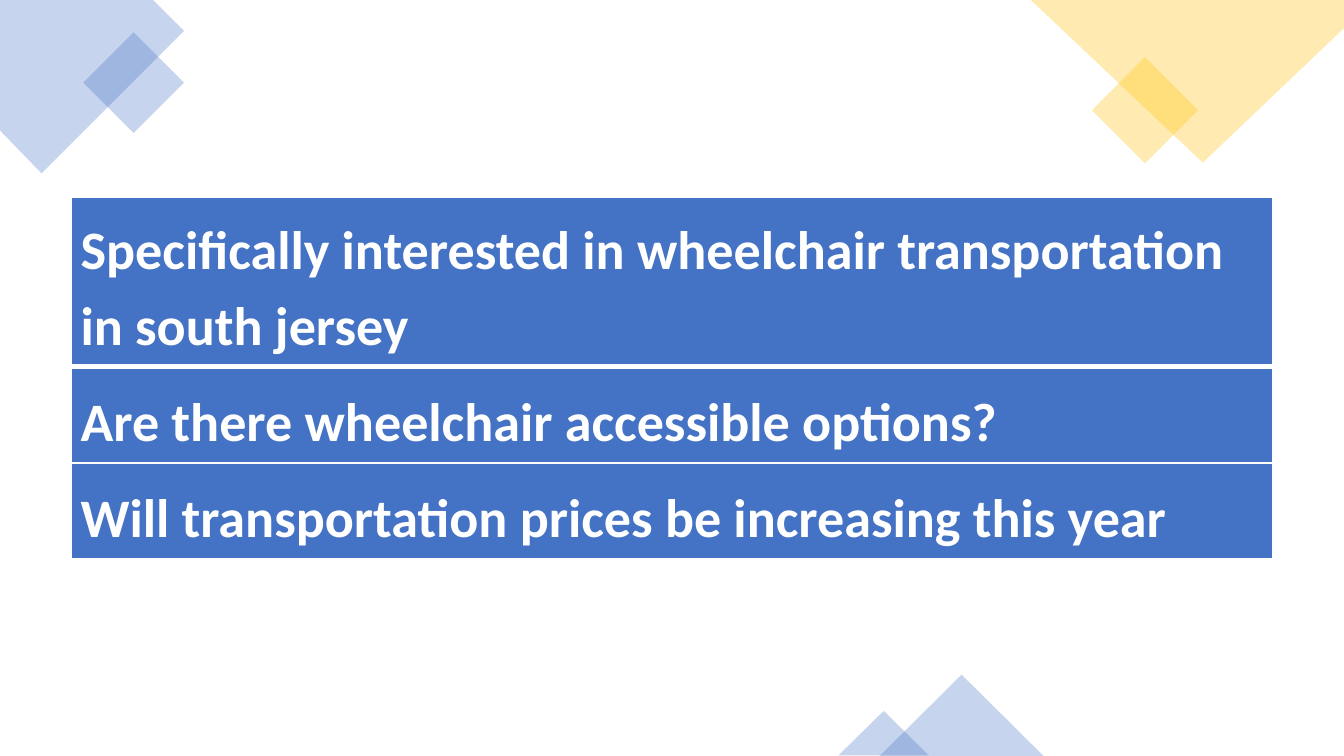
"""Build a slide of three transportation questions framed by corner diamonds."""
from lxml import etree
from pptx import Presentation
from pptx import util as u
from pptx.dml.color import RGBColor
from pptx.enum import shapes, text
from pptx.oxml import ns

BLUE = RGBColor(0x44, 0x72, 0xC4)
GOLD = RGBColor(0xFF, 0xC0, 0x00)
WHITE = RGBColor(0xFF, 0xFF, 0xFF)

BLUE_CORNER = [(0, 0), (1.14, 0), (1.37, 0.23), (0.31, 1.29), (0, 0.97)]
GOLD_CORNER = [(7.67, 0), (10, 0), (10, 0.21), (8.95, 1.21)]
QUESTIONS = [
    "Specifically interested in wheelchair transportation in south jersey",
    "Are there wheelchair accessible options?",
    "Will transportation prices be increasing this year",
]
TABLE_HEIGHT, FIRST_ROW_HEIGHT = 2.69, 1.26
THIN, THICK = 1, 3

CELL_FORMAT = {
    "margin_left": u.Inches(0.07),
    "margin_right": u.Inches(0.07),
    "margin_top": u.Inches(0.05),
    "margin_bottom": u.Inches(0.05),
    "vertical_anchor": text.MSO_ANCHOR.BOTTOM,
}
PARAGRAPH_FORMAT = {
    "alignment": text.PP_ALIGN.LEFT,
    "line_spacing": 1.15,
    "space_after": u.Pt(8),
}
FONT_FORMAT = {"name": "Calibri", "size": u.Pt(29), "bold": True}


def apply_format(target, values):
    """Set each named attribute on the target."""
    for name, value in values.items():
        setattr(target, name, value)


def tint(shape, color):
    """Give a shape a 30 % opaque fill with no line or shadow."""
    shape.shadow.inherit = False
    shape.line.fill.background()
    shape.fill.solid()
    shape.fill.fore_color.rgb = color
    solid = shape.fill._xPr.find(ns.qn("a:solidFill"))
    etree.SubElement(solid[0], ns.qn("a:alpha"), val="30000")


def add_corner(slide, points, color):
    """Add a large diamond cropped by the slide edges."""
    corner = [(u.Inches(x), u.Inches(y)) for x, y in points]
    builder = slide.shapes.build_freeform(*corner[0])
    builder.add_line_segments(corner[1:], close=True)
    tint(builder.convert_to_shape(), color)


def add_accent(slide, kind, box, color, rotation=0):
    """Add a small translucent preset shape."""
    shape = slide.shapes.add_shape(kind, *map(u.Inches, box))
    shape.rotation = rotation
    tint(shape, color)


def add_border(cell, side, points):
    """Draw one white cell border."""
    properties = cell._tc.get_or_add_tcPr()
    line = etree.SubElement(properties, ns.qn(f"a:ln{side}"), w=str(u.Pt(points)))
    solid = etree.SubElement(line, ns.qn("a:solidFill"))
    etree.SubElement(solid, ns.qn("a:srgbClr"), val=str(WHITE))


def fill_cell(cell, question, top, bottom):
    """Write a question into a blue cell with white borders."""
    apply_format(cell, CELL_FORMAT)
    for side, points in (("L", THIN), ("R", THIN), ("T", top), ("B", bottom)):
        add_border(cell, side, points)
    cell.fill.solid()
    cell.fill.fore_color.rgb = BLUE
    paragraph = cell.text_frame.paragraphs[0]
    apply_format(paragraph, PARAGRAPH_FORMAT)
    run = paragraph.add_run()
    run.text = question
    apply_format(run.font, FONT_FORMAT)
    run.font.color.rgb = WHITE


def add_questions(slide):
    """Add the one-column table of questions."""
    box = map(u.Inches, (0.53, 1.47, 8.94, TABLE_HEIGHT))
    table = slide.shapes.add_table(len(QUESTIONS), 1, *box).table
    other_height = (TABLE_HEIGHT - FIRST_ROW_HEIGHT) / (len(QUESTIONS) - 1)
    edges = [THIN, THICK, THIN, THIN]
    for index, question in enumerate(QUESTIONS):
        height = other_height if index else FIRST_ROW_HEIGHT
        table.rows[index].height = u.Inches(height)
        fill_cell(table.cell(index, 0), question, edges[index], edges[index + 1])


def main():
    """Build and save the presentation."""
    presentation = Presentation()
    presentation.slide_width = u.Inches(10)
    presentation.slide_height = u.Inches(10) * 9 // 16
    slide = presentation.slides.add_slide(presentation.slide_layouts[6])
    square = shapes.MSO_SHAPE.RECTANGLE
    triangle = shapes.MSO_SHAPE.ISOSCELES_TRIANGLE
    add_corner(slide, BLUE_CORNER, BLUE)
    add_accent(slide, square, (0.73, 0.35, 0.53, 0.53), BLUE, 315)
    add_accent(slide, square, (8.24, 0.54, 0.56, 0.56), GOLD, 315)
    add_corner(slide, GOLD_CORNER, GOLD)
    add_accent(slide, triangle, (6.54, 5.02, 1.23, 0.61), BLUE)
    add_accent(slide, triangle, (6.24, 5.29, 0.67, 0.33), BLUE)
    add_questions(slide)
    presentation.save("out.pptx")


if __name__ == "__main__":
    main()
